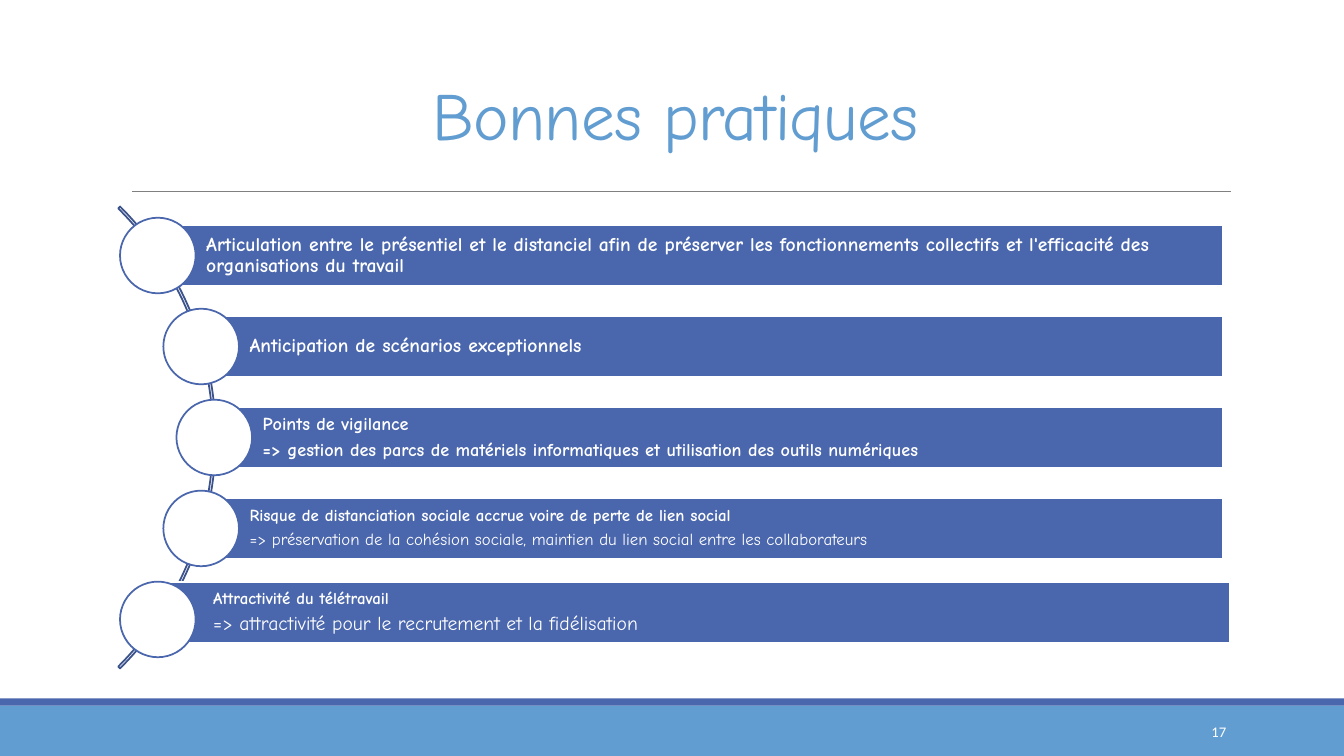
from lxml import etree
from pptx import Presentation
from pptx import util as u
from pptx.dml.color import RGBColor
from pptx.enum import shapes, text
from pptx.oxml.ns import qn

BLUE, INDIGO, ARC, GREY, WHITE = "629DD1", "4A66AC", "3B528A", "808080", "FFFFFF"
FONT = "Comic Neue"


def rgb(hex_color):
    return RGBColor.from_string(hex_color)


def write(p, words, size=14, color=WHITE, font=FONT, bold=False,
          align=text.PP_ALIGN.LEFT, spacing=1.0, after=0, tracking=None):
    """Add one formatted run to a paragraph."""
    p.alignment, p.line_spacing, p.space_after = align, spacing, u.Pt(after)
    r = p.add_run()
    r.text = words
    r.font.size, r.font.name, r.font.bold = u.Pt(size), font, bold
    r.font.color.rgb = rgb(color)
    if tracking is not None:
        r.font._element.set("spc", str(int(tracking * 100)))


class Deck:
    """Style and current slide, with one method per kind of element."""

    def __init__(self, prs):
        self.s = prs.slides.add_slide(prs.slide_layouts[5])

    def place(self, sp, box):
        sp.left, sp.top, sp.width, sp.height = map(u.Inches, box)

    def title(self, words, box):
        sp = self.s.shapes.title
        self.place(sp, box)
        tf = sp.text_frame
        tf.auto_size = text.MSO_AUTO_SIZE.NONE
        tf.vertical_anchor = text.MSO_ANCHOR.BOTTOM
        write(tf.paragraphs[0], words, size=48, color=BLUE, spacing=0.85,
              align=text.PP_ALIGN.CENTER, tracking=-0.5)

    def shape(self, kind, box, fill=None, line=None, width=1.25):
        sp = self.s.shapes.add_shape(kind, *map(u.Inches, box))
        sp.shadow.inherit = False
        if fill:
            sp.fill.solid()
            sp.fill.fore_color.rgb = rgb(fill)
        else:
            sp.fill.background()
        if line:
            sp.line.color.rgb = rgb(line)
            sp.line.width = u.Pt(width)
        else:
            sp.line.fill.background()
        return sp

    def rule(self, x1, y1, x2, y2):
        ends = map(u.Inches, (x1, y1, x2, y2))
        c = self.s.shapes.add_connector(shapes.MSO_CONNECTOR.STRAIGHT, *ends)
        c.line.color.rgb = rgb(GREY)
        c.line.width = u.Pt(0.5)
        etree.SubElement(c._element.spPr, qn("a:effectLst"))

    def bar(self, box, lines, inset):
        sp = self.shape(shapes.MSO_SHAPE.RECTANGLE, box, INDIGO, WHITE)
        tf = sp.text_frame
        tf.word_wrap = True
        tf.vertical_anchor = text.MSO_ANCHOR.MIDDLE
        tf.margin_left = u.Inches(0.48)
        tf.margin_top = tf.margin_right = tf.margin_bottom = u.Inches(inset)
        for i, (words, size, bold) in enumerate(lines):
            p = tf.add_paragraph() if i else tf.paragraphs[0]
            write(p, words, size=size, bold=bold, spacing=0.9, after=0.35 * size)

    def page_number(self, number, box):
        tf = self.s.shapes.add_textbox(*map(u.Inches, box)).text_frame
        tf.word_wrap = True
        tf.vertical_anchor = text.MSO_ANCHOR.MIDDLE
        write(tf.paragraphs[0], number, size=10.5, font="Calibri",
              align=text.PP_ALIGN.RIGHT)


# Per practice: circle left, bar shift (x, y), inset, lines of (words, size, bold)
PRACTICES = [
    (1.19, (0, 0), 0.04, [
        ("Articulation entre le présentiel et le distanciel afin de préserver les "
         "fonctionnements collectifs et l'efficacité des organisations du travail",
         14, True)]),
    (1.62, (0, 0), 0.04, [("Anticipation de scénarios exceptionnels", 14, True)]),
    (1.75, (0, 0), 0.04, [
        ("Points de vigilance", 13, True),
        ("=> gestion des parcs de matériels informatiques et utilisation des "
         "outils numériques", 13, True)]),
    (1.62, (0, 0), 0.03, [
        ("Risque de distanciation sociale accrue voire de perte de lien social",
         12, True),
        ("=> préservation de la cohésion sociale, maintien du lien social entre "
         "les collaborateurs", 12, False)]),
    (1.19, (0.07, -0.07), 0.03, [
        ("Attractivité du télétravail", 12, True),
        ("=> attractivité pour le recrutement et la fidélisation", 14, False)]),
]
CIRCLE, BAR_HEIGHT, BAR_RIGHT = 0.75, 0.6, 12.13
FIRST_TOP, LAST_TOP = 2.16, 5.77


def main():
    prs = Presentation()
    prs.slide_width, prs.slide_height = u.Inches(13.33), u.Inches(7.5)
    deck = Deck(prs)
    kinds = shapes.MSO_SHAPE

    # Footer bands, title and rule
    deck.shape(kinds.RECTANGLE, (0, 7, 13.33, 0.5), BLUE)
    deck.shape(kinds.RECTANGLE, (0, 6.93, 13.33, 0.07), INDIGO)
    deck.rule(1.31, 1.9, 12.21, 1.9)
    deck.title("Bonnes pratiques", (1.2, 0.31, 11, 1.27))

    # Arc behind the list
    arc = deck.shape(kinds.BLOCK_ARC, (-4.34, 1.1, 6.48, 6.48), line=ARC)
    for i, value in enumerate((189, 27, 0.004)):
        arc.adjustments[i] = value

    # Bars and their circles, evenly spaced
    pitch = (LAST_TOP - FIRST_TOP) / (len(PRACTICES) - 1)
    for i, (x, (dx, dy), inset, lines) in enumerate(PRACTICES):
        y = FIRST_TOP + i * pitch
        left = x + CIRCLE / 2
        top = y + (CIRCLE - BAR_HEIGHT) / 2
        deck.bar((left + dx, top + dy, BAR_RIGHT - left, BAR_HEIGHT), lines, inset)
        deck.shape(kinds.OVAL, (x, y, CIRCLE, CIRCLE), WHITE, INDIGO)

    # Page number
    deck.page_number("17", (10.83, 7.06, 1.43, 0.4))
    prs.save("out.pptx")


if __name__ == "__main__":
    main()
